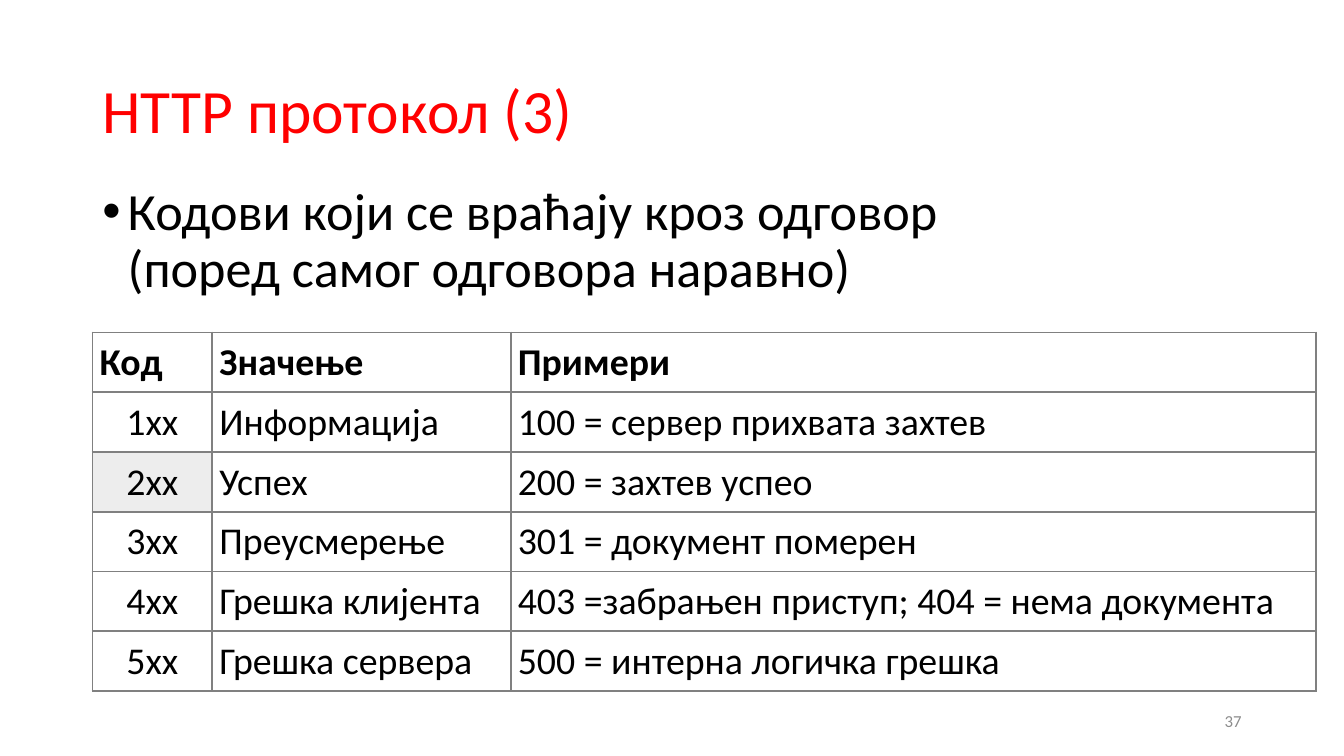
from lxml.etree import SubElement
from pptx import Presentation
from pptx.dml.color import RGBColor
from pptx.enum.text import MSO_ANCHOR, PP_ALIGN
from pptx.oxml.ns import qn
from pptx.util import Cm, Pt

FONT = "Calibri"
BLACK = "000000"
RED = "FF0000"
GREY = "8C8C8C"
BORDER = "808080"
SHADE = "EDEDED"

COLUMN_WIDTHS = (3.02, 7.52, 20.29)
ROW_HEIGHT = 1.48
STATUS_CODES = (
    ("Код", "Значење", "Примери"),
    ("1xx", "Информација", "100 = сервер прихвата захтев"),
    ("2xx", "Успех", "200 = захтев успео"),
    ("3xx", "Преусмерење", "301 = документ померен"),
    ("4xx", "Грешка клијента", "403 =забрањен приступ; 404 = нема документа"),
    ("5xx", "Грешка сервера", "500 = интерна логичка грешка"),
)
SHADED_CELL = (2, 0)


def color(value):
    return RGBColor.from_string(value)


def add_run(paragraph, text, size, ink=BLACK, bold=False):
    run = paragraph.add_run()
    run.text = text
    run.font.name = FONT
    run.font.size = Pt(size)
    run.font.bold = bold
    run.font.color.rgb = color(ink)


def add_text(slide, left, top, width, height, lines, size, ink=BLACK,
             anchor=MSO_ANCHOR.MIDDLE, align=PP_ALIGN.LEFT, spacing=1.0):
    box = slide.shapes.add_textbox(Cm(left), Cm(top), Cm(width), Cm(height))
    frame = box.text_frame
    frame.word_wrap = True
    frame.vertical_anchor = anchor
    paragraph = frame.paragraphs[0]
    paragraph.alignment = align
    paragraph.line_spacing = spacing
    for index, line in enumerate(lines):
        if index:
            paragraph.add_line_break()
        add_run(paragraph, line, size, ink)
    return paragraph


def add_bullet(paragraph, indent):
    properties = paragraph._p.get_or_add_pPr()
    properties.set("marL", str(Cm(indent)))
    properties.set("indent", str(-Cm(indent)))
    SubElement(properties, qn("a:buFont"), typeface="Arial")
    SubElement(properties, qn("a:buChar"), char="•")


def add_borders(cell):
    properties = cell._tc.get_or_add_tcPr()
    for side in ("a:lnL", "a:lnR", "a:lnT", "a:lnB"):
        line = SubElement(properties, qn(side), w=str(Pt(1.5)))
        fill = SubElement(line, qn("a:solidFill"))
        SubElement(fill, qn("a:srgbClr"), val=BORDER)


def fill_cell(cell, text, is_header, is_code, is_shaded):
    cell.vertical_anchor = MSO_ANCHOR.MIDDLE
    cell.margin_left = cell.margin_right = Cm(0.18)
    cell.margin_top = cell.margin_bottom = Cm(0.18)
    add_borders(cell)
    if is_shaded:
        cell.fill.solid()
        cell.fill.fore_color.rgb = color(SHADE)
    else:
        cell.fill.background()
    paragraph = cell.text_frame.paragraphs[0]
    centred = is_code and not is_header
    paragraph.alignment = PP_ALIGN.CENTER if centred else PP_ALIGN.LEFT
    add_run(paragraph, text, 27, bold=is_header)


def add_code_table(slide, left, top):
    table = slide.shapes.add_table(
        len(STATUS_CODES), len(COLUMN_WIDTHS), Cm(left), Cm(top),
        Cm(sum(COLUMN_WIDTHS)), Cm(ROW_HEIGHT * len(STATUS_CODES))).table
    table.horz_banding = False
    table.first_row = False
    for column, width in zip(table.columns, COLUMN_WIDTHS):
        column.width = Cm(width)
    for row, entries in enumerate(STATUS_CODES):
        table.rows[row].height = Cm(ROW_HEIGHT)
        for column, text in enumerate(entries):
            fill_cell(table.cell(row, column), text, row == 0, column == 0,
                      (row, column) == SHADED_CELL)


def main():
    deck = Presentation()
    deck.slide_width = Cm(33.87)
    deck.slide_height = Cm(19.05)
    slide = deck.slides.add_slide(deck.slide_layouts[6])

    add_text(slide, 2.33, 1.02, 29.21, 3.68, ["HTTP протокол (3)"], 44, RED,
             spacing=0.9)
    intro = add_text(
        slide, 2.33, 4.55, 29.21, 12.09,
        ["Кодови који се враћају кроз одговор", "(поред самог одговора наравно)"],
        37.3, anchor=MSO_ANCHOR.TOP, spacing=0.9)
    intro.space_before = Pt(10)
    add_bullet(intro, 0.64)
    add_code_table(slide, 2.33, 8.38)
    add_text(slide, 23.92, 17.66, 7.62, 1.01, ["37"], 12, GREY,
             align=PP_ALIGN.RIGHT)

    deck.save("out.pptx")


if __name__ == "__main__":
    main()
